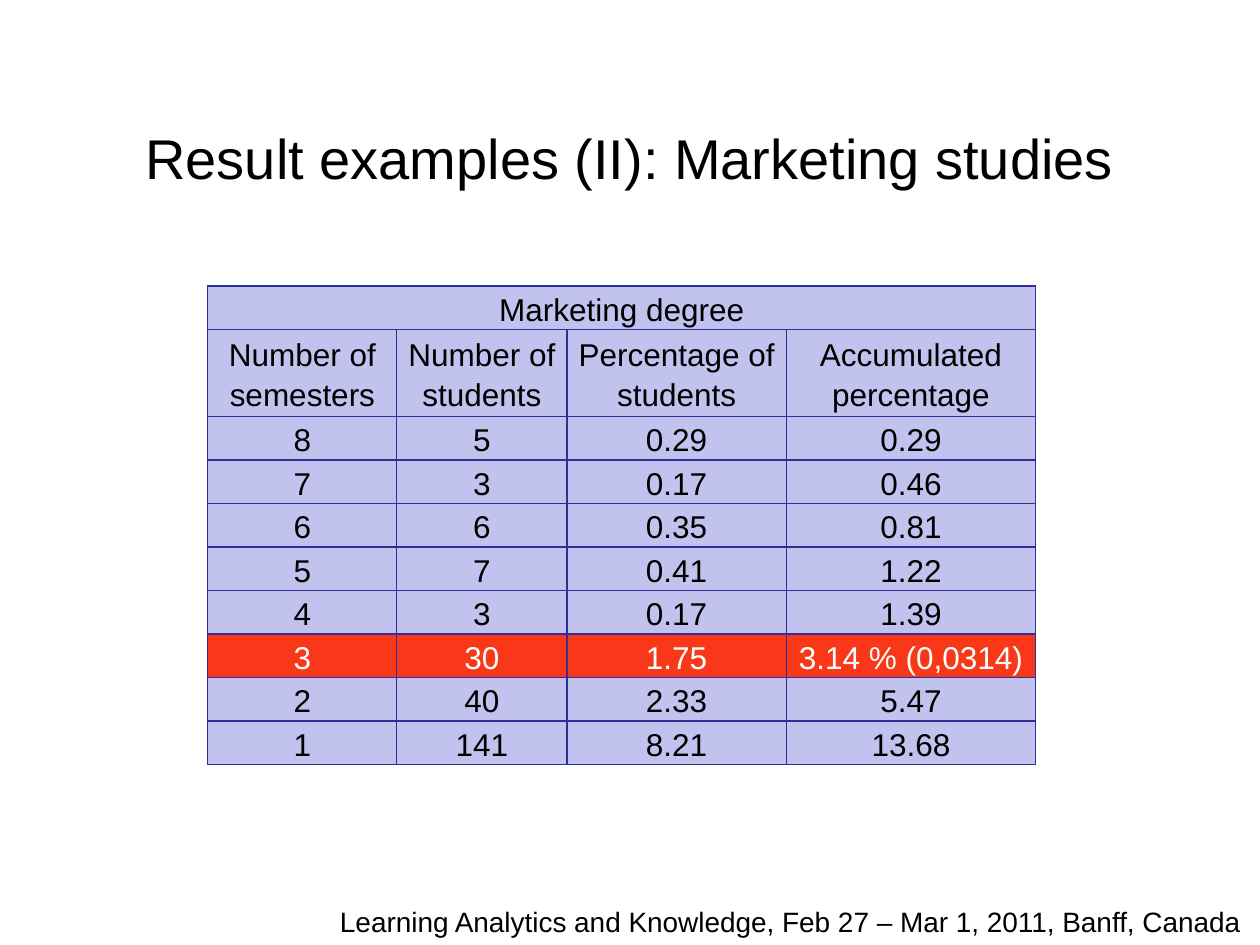
from lxml import etree
from pptx import Presentation
from pptx import util as u
from pptx.dml.color import RGBColor
from pptx.enum import text
from pptx.oxml.ns import qn

COLORS = {"ink": "000000", "cell": "C2C2EE", "border": "2F2F98",
          "highlight": "F83818", "light": "FFFFFF"}
TITLE = "Result examples (II): Marketing studies"
FOOTER = "Learning Analytics and Knowledge, Feb 27 – Mar 1, 2011, Banff, Canada"
CAPTION = "Marketing degree"
HEADERS = ["Number of semesters", "Number of students",
           "Percentage of students", "Accumulated percentage"]
DATA = [
    ("8", "5", "0.29", "0.29"),
    ("7", "3", "0.17", "0.46"),
    ("6", "6", "0.35", "0.81"),
    ("5", "7", "0.41", "1.22"),
    ("4", "3", "0.17", "1.39"),
    ("3", "30", "1.75", "3.14 % (0,0314)"),
    ("2", "40", "2.33", "5.47"),
    ("1", "141", "8.21", "13.68"),
]
HIGHLIGHT_SEMESTERS = "3"
COL_WIDTHS = [1.5, 1.35, 1.74, 1.98]
ROW_HEIGHTS = [0.34, 0.6] + [0.26] * len(DATA)


def write(tf, content, size=18, color="ink", align=text.PP_ALIGN.CENTER,
          spacing=None):
    p = tf.paragraphs[0]
    p.alignment = align
    p.line_spacing = spacing
    r = p.add_run()
    r.text = content
    r.font.name = "Arial"
    r.font.size = u.Pt(size)
    r.font.color.rgb = RGBColor.from_string(COLORS[color])


def add_text(s, box, content, wrap=True, anchor=text.MSO_ANCHOR.TOP, **fmt):
    tf = s.shapes.add_textbox(*map(u.Inches, box)).text_frame
    tf.word_wrap = wrap
    tf.vertical_anchor = anchor
    write(tf, content, **fmt)
    return tf


def set_borders(cell):
    tcPr = cell._tc.get_or_add_tcPr()
    for side in ("lnL", "lnR", "lnT", "lnB"):
        ln = etree.SubElement(tcPr, qn(f"a:{side}"), w=str(u.Pt(0.75)))
        fill = etree.SubElement(ln, qn("a:solidFill"))
        etree.SubElement(fill, qn("a:srgbClr"), val=COLORS["border"])


def add_degree_table(s):
    rows = [(CAPTION, "", "", ""), HEADERS, *DATA]
    table = s.shapes.add_table(
        len(rows), len(HEADERS), u.Inches(1.65), u.Inches(2.27),
        u.Inches(sum(COL_WIDTHS)), u.Inches(sum(ROW_HEIGHTS))).table
    table.first_row = table.horz_banding = False
    for column, width in zip(table.columns, COL_WIDTHS):
        column.width = u.Inches(width)
    for row, height, values in zip(table.rows, ROW_HEIGHTS, rows):
        row.height = u.Inches(height)
        marked = values[0] == HIGHLIGHT_SEMESTERS
        for cell, value in zip(row.cells, values):
            set_borders(cell)
            cell.fill.solid()
            cell.fill.fore_color.rgb = RGBColor.from_string(
                COLORS["highlight" if marked else "cell"])
            cell.margin_left = cell.margin_right = u.Inches(0.07)
            cell.margin_top = cell.margin_bottom = 0
            cell.vertical_anchor = text.MSO_ANCHOR.MIDDLE
            if value:
                write(cell.text_frame, value, spacing=1.15,
                      color="light" if marked else "ink")
    table.cell(0, 0).merge(table.cell(0, len(HEADERS) - 1))


def main():
    prs = Presentation()
    prs.slide_width, prs.slide_height = u.Inches(10), u.Inches(7.5)
    s = prs.slides.add_slide(prs.slide_layouts[6])
    add_text(s, (0.5, 0.62, 9, 1.25), TITLE, size=32,
             anchor=text.MSO_ANCHOR.MIDDLE)
    add_degree_table(s)
    tf = add_text(s, (2.6, 7.13, 7.4, 0.37), FOOTER, wrap=False, size=16,
                  align=text.PP_ALIGN.LEFT)
    tf.auto_size = text.MSO_AUTO_SIZE.SHAPE_TO_FIT_TEXT
    prs.save("out.pptx")


if __name__ == "__main__":
    main()
